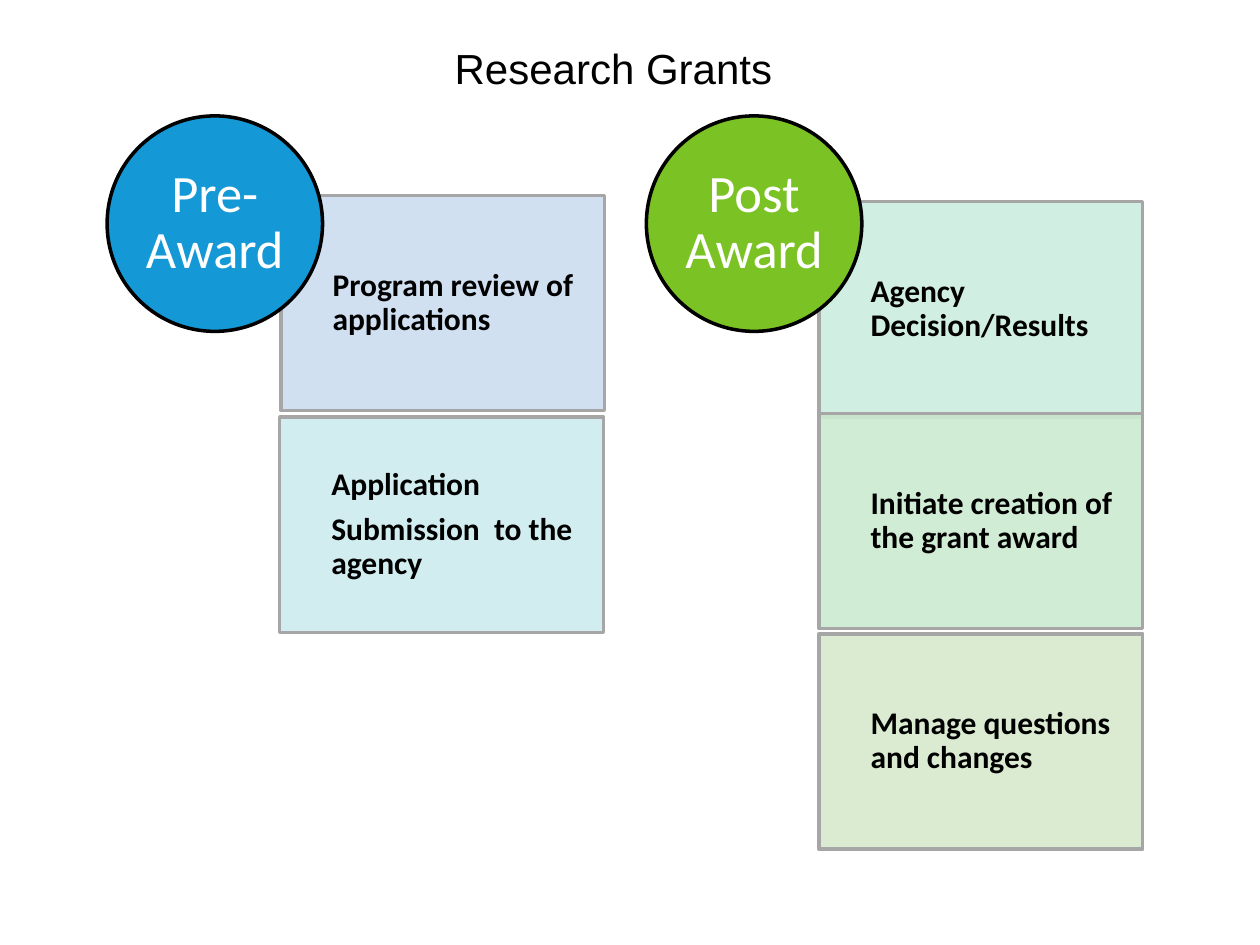
from lxml.etree import SubElement
from pptx import Presentation
from pptx.dml.color import RGBColor
from pptx.enum.shapes import MSO_SHAPE
from pptx.enum.text import MSO_ANCHOR, PP_ALIGN
from pptx.oxml.ns import qn
from pptx.util import Inches, Pt

COLORS = {
    "black": "000000", "white": "FFFFFF", "edge": "A6A6A6",
    "blue": "1598D6", "green": "7BC224",
    "sky": "CCDDF0", "aqua": "CCECEE",
    "mint": "CDEDDF", "leaf": "CDEBD0", "olive": "D7E9CD",
}
SIDE = 1.71    # circle diameter and card height
CARD_W = 2.57
CARD_DX = 1.37  # card offset from the circle's left edge

# left, top, circle label, circle fill, cards as (offset x, offset y, text, fill)
STAGES = [
    (0.85, 0.92, "Pre-Award", "blue", [
        (0.01, 0.63, "Program review of applications", "sky"),
        (0, 2.39, "Application\nSubmission  to the agency", "aqua"),
    ]),
    (5.13, 0.92, "Post Award", "green", [
        (0, 0.68, "Agency Decision/Results", "mint"),
        (0, 2.36, "Initiate creation of the grant award", "leaf"),
        (0, 4.11, "Manage questions and changes", "olive"),
    ]),
]


def color(name):
    return RGBColor.from_string(COLORS[name])


def style_text(frame, text, font, size, ink, bold=False):
    frame.word_wrap = True
    frame.text = text
    for para in frame.paragraphs:
        for run in para.runs:
            run.font.name = font
            run.font.size = Pt(size)
            run.font.bold = bold
            run.font.color.rgb = color(ink)


def add_block(slide, kind, box, fill, edge, text, size, ink, bold, align, insets):
    """Add a filled, outlined shape with its text; insets run left, top, right, bottom."""
    shape = slide.shapes.add_shape(kind, *map(Inches, box))
    shape.shadow.inherit = False
    shape.fill.solid()
    shape.fill.fore_color.rgb = color(fill)
    shape.line.color.rgb = color(edge)
    shape.line.width = Pt(2)
    frame = shape.text_frame
    frame.margin_left, frame.margin_top, frame.margin_right, frame.margin_bottom = map(
        Inches, insets)
    frame.vertical_anchor = MSO_ANCHOR.MIDDLE
    style_text(frame, text, "Calibri", size, ink, bold)
    for para in frame.paragraphs:
        para.alignment = align
        para.line_spacing = 0.9
        para.space_after = Pt(0.35 * size)
    return shape


def add_card(slide, box, text, fill):
    card = add_block(slide, MSO_SHAPE.RECTANGLE, box, fill, "edge", text, 18,
                     "black", True, PP_ALIGN.LEFT, (0.41, 0.14, 0.14, 0.14))
    tint = card.fill._xPr.find(qn("a:solidFill"))[0]
    SubElement(tint, qn("a:alpha"), val="90000")


def add_stage(slide, left, top, label, fill, cards):
    """Add a column of cards with a circle over its top left corner."""
    for dx, dy, text, tint in cards:
        add_card(slide, (left + CARD_DX + dx, top + dy, CARD_W, SIDE), text, tint)
    add_block(slide, MSO_SHAPE.OVAL, (left, top, SIDE, SIDE), fill, "black", label,
              30, "white", False, PP_ALIGN.CENTER, (0, 0, 0, 0))


def add_title(slide, box, text):
    title = slide.shapes.add_textbox(*map(Inches, box))
    style_text(title.text_frame, text, "Arial", 24, "black")


def main():
    deck = Presentation()
    deck.slide_width, deck.slide_height = Inches(10), Inches(7.5)
    slide = deck.slides.add_slide(deck.slide_layouts[6])
    for stage in STAGES:
        add_stage(slide, *stage)
    add_title(slide, (3.51, 0.29, 2.9, 0.5), "Research Grants")
    deck.save("out.pptx")


if __name__ == "__main__":
    main()
